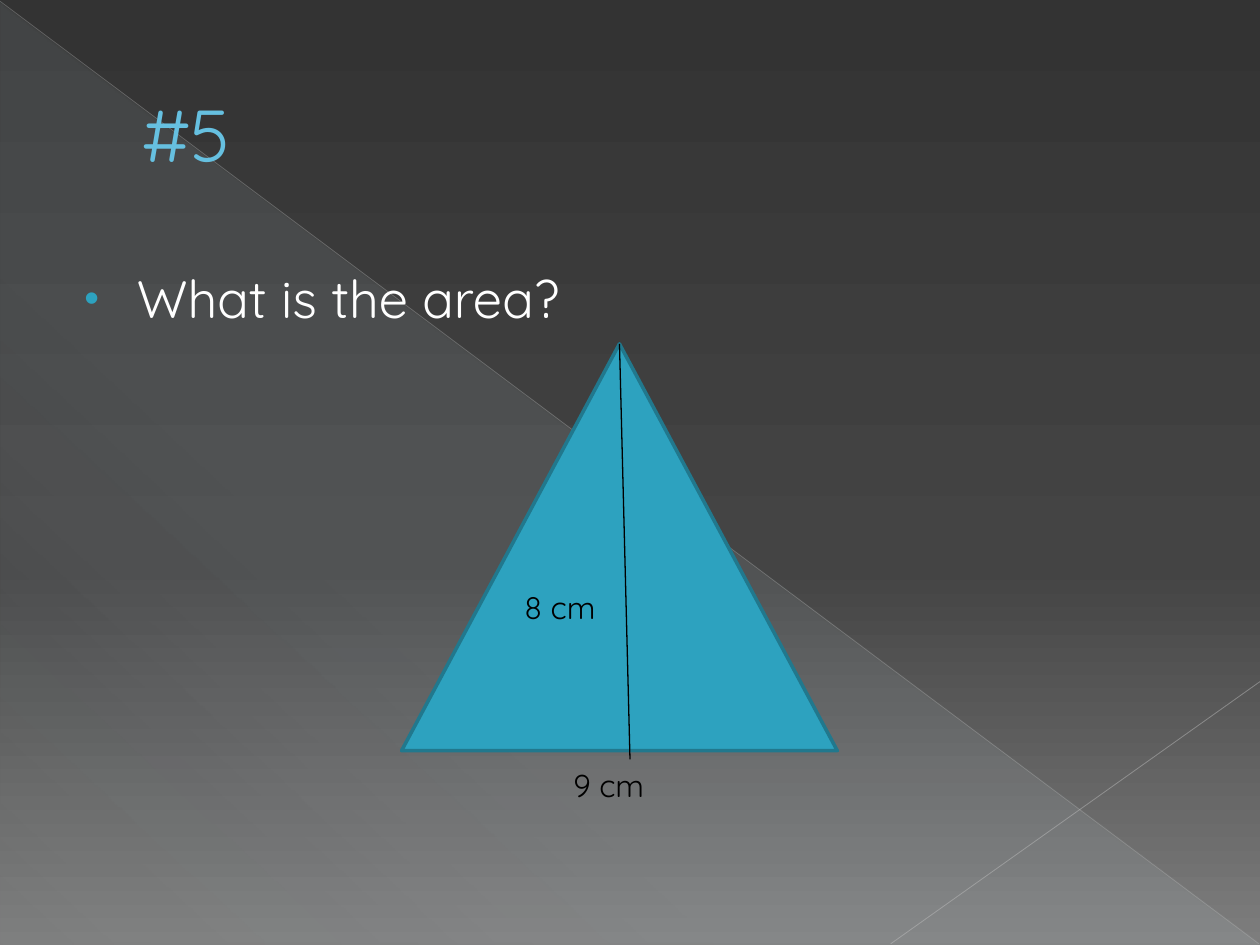
from lxml import etree
from pptx import Presentation
from pptx.dml.color import RGBColor
from pptx.enum.shapes import MSO_CONNECTOR, MSO_SHAPE
from pptx.enum.text import MSO_ANCHOR, MSO_AUTO_SIZE, PP_ALIGN
from pptx.oxml.ns import qn
from pptx.util import Pt

STRAIGHT = MSO_CONNECTOR.STRAIGHT
RIGHT_TRIANGLE = MSO_SHAPE.RIGHT_TRIANGLE
TRIANGLE = MSO_SHAPE.ISOSCELES_TRIANGLE
TOP, MIDDLE = MSO_ANCHOR.TOP, MSO_ANCHOR.MIDDLE
LEFT = PP_ALIGN.LEFT
NO_FIT, GROW = MSO_AUTO_SIZE.NONE, MSO_AUTO_SIZE.SHAPE_TO_FIT_TEXT

FONT = "Quicksand"
WIDTH, HEIGHT = 720, 540
COLORS = {
    "dark": "333333", "mid": "444444", "light": "7D7D7D",
    "veil": "DEF5FA", "diagonal": "B9B9B9", "corner": "C1C1C1",
    "title": "66C0E0", "title_edge": "1F7084",
    "accent": "2DA2BF", "accent_edge": "21788D",
    "white": "FFFFFF", "black": "000000",
}


def rgb(name):
    return RGBColor.from_string(COLORS[name])


def points(box):
    return [Pt(value) for value in box]


def add_xml(parent, tag, **attributes):
    return etree.SubElement(parent, qn(tag), attributes)


def add_color(parent, name, opacity=100):
    color = add_xml(parent, "a:srgbClr", val=COLORS[name])
    if opacity < 100:
        add_xml(color, "a:alpha", val=str(opacity * 1000))


def set_gradient(fill, owner, angle, stops):
    """Fill with (position %, colour, opacity %) stops; angle runs clockwise."""
    fill.gradient()
    fill.gradient_angle = 360 - angle
    stop_list = owner.find(".//" + qn("a:gsLst"))
    for old in list(stop_list):
        stop_list.remove(old)
    for position, name, opacity in stops:
        stop = add_xml(stop_list, "a:gs", pos=str(position * 1000))
        add_color(stop, name, opacity)


def add_line(slide, start, end, color, width, opacity=100):
    line = slide.shapes.add_connector(STRAIGHT, *points(start + end))
    line.line.color.rgb = rgb(color)
    line.line.width = Pt(width)
    if opacity < 100:
        stroke = line.element.find(".//" + qn("a:ln")).find(qn("a:solidFill"))
        add_xml(stroke[0], "a:alpha", val=str(opacity * 1000))
    add_xml(line.element.spPr, "a:effectLst")
    return line


def write_text(shape, text, size, color, anchor=TOP, fit=NO_FIT, margin=0, indent=0):
    frame = shape.text_frame
    frame.word_wrap = True
    frame.auto_size = fit
    frame.vertical_anchor = anchor
    paragraph = frame.paragraphs[0]
    paragraph.alignment = LEFT
    properties = paragraph._p.get_or_add_pPr()
    properties.set("marL", str(Pt(margin)))
    properties.set("indent", str(Pt(indent)))
    run = paragraph.add_run()
    run.text = text
    run.font.name = FONT
    run.font.size = Pt(size)
    run.font.color.rgb = rgb(color)
    return paragraph


def place(slide, placeholder, box):
    """Position a placeholder and bring it in front of the backdrop."""
    placeholder.left, placeholder.top, placeholder.width, placeholder.height = points(box)
    slide.shapes.element.append(placeholder.element)


def draw_backdrop(slide, box):
    left, top, width, height = box
    right, bottom = left + width, top + height
    set_gradient(slide.background.fill, slide.element, 90,
                 [(0, "dark", 100), (60, "mid", 100), (100, "light", 100)])
    veil = slide.shapes.add_shape(RIGHT_TRIANGLE, *points((left, top + 1, width, height - 1)))
    veil.shadow.inherit = False
    veil.line.fill.background()
    set_gradient(veil.fill, veil.element, 133,
                 [(0, "veil", 10), (70, "veil", 8), (100, "veil", 1)])
    add_line(slide, (left, top + 0.7), (right - 0.7, bottom - 0.7), "diagonal", 0.39, 35)
    add_line(slide, (right, top + 389.5), (left + 509, bottom - 0.7), "corner", 0.47, 45)


def fill_title(slide, box):
    title = slide.shapes.title
    place(slide, title, box)
    paragraph = write_text(title, "#5", 42, "title", anchor=MIDDLE, margin=38)
    # Thin outline around the letters
    outline = etree.Element(qn("a:ln"), w=str(Pt(0.5)))
    add_color(add_xml(outline, "a:solidFill"), "title_edge")
    paragraph.runs[0].font._element.insert(0, outline)


def fill_question(slide, box):
    question = slide.placeholders[1]
    place(slide, question, box)
    paragraph = write_text(question, "What is the area?", 30, "white", margin=35, indent=-30)
    # Small accent bullet
    properties = paragraph._p.get_or_add_pPr()
    add_color(add_xml(properties, "a:buClr"), "accent")
    add_xml(properties, "a:buSzPct", val="80000")
    add_xml(properties, "a:buFont", typeface="Arial")
    add_xml(properties, "a:buChar", char="•")


def draw_triangle(slide, box):
    left, top, width, height = box
    triangle = slide.shapes.add_shape(TRIANGLE, *points(box))
    triangle.shadow.inherit = False
    triangle.fill.solid()
    triangle.fill.fore_color.rgb = rgb("accent")
    triangle.line.color.rgb = rgb("accent_edge")
    triangle.line.width = Pt(2)

    # Height of the triangle, from the apex
    altitude = add_line(slide, (left + width / 2, top), (left + 130.5, top + height + 5),
                        "black", 0.75)
    altitude.begin_connect(triangle, 0)

    # Measurements
    for text, x, y, label_width in [("9 cm", 91, 237.5, 79), ("8 cm", 63, 136, 68)]:
        label = slide.shapes.add_textbox(*points((left + x, top + y, label_width, 29)))
        write_text(label, text, 18, "black", fit=GROW)


def main():
    deck = Presentation()
    deck.slide_width, deck.slide_height = Pt(WIDTH), Pt(HEIGHT)
    slide = deck.slides.add_slide(deck.slide_layouts[1])
    draw_backdrop(slide, (0, 0, WIDTH, HEIGHT))
    fill_title(slide, (36, 21, 648, 110))
    fill_question(slide, (36, 148.5, 648, 360))
    draw_triangle(slide, (229.5, 196.5, 249, 232.5))
    deck.save("out.pptx")


if __name__ == "__main__":
    main()
